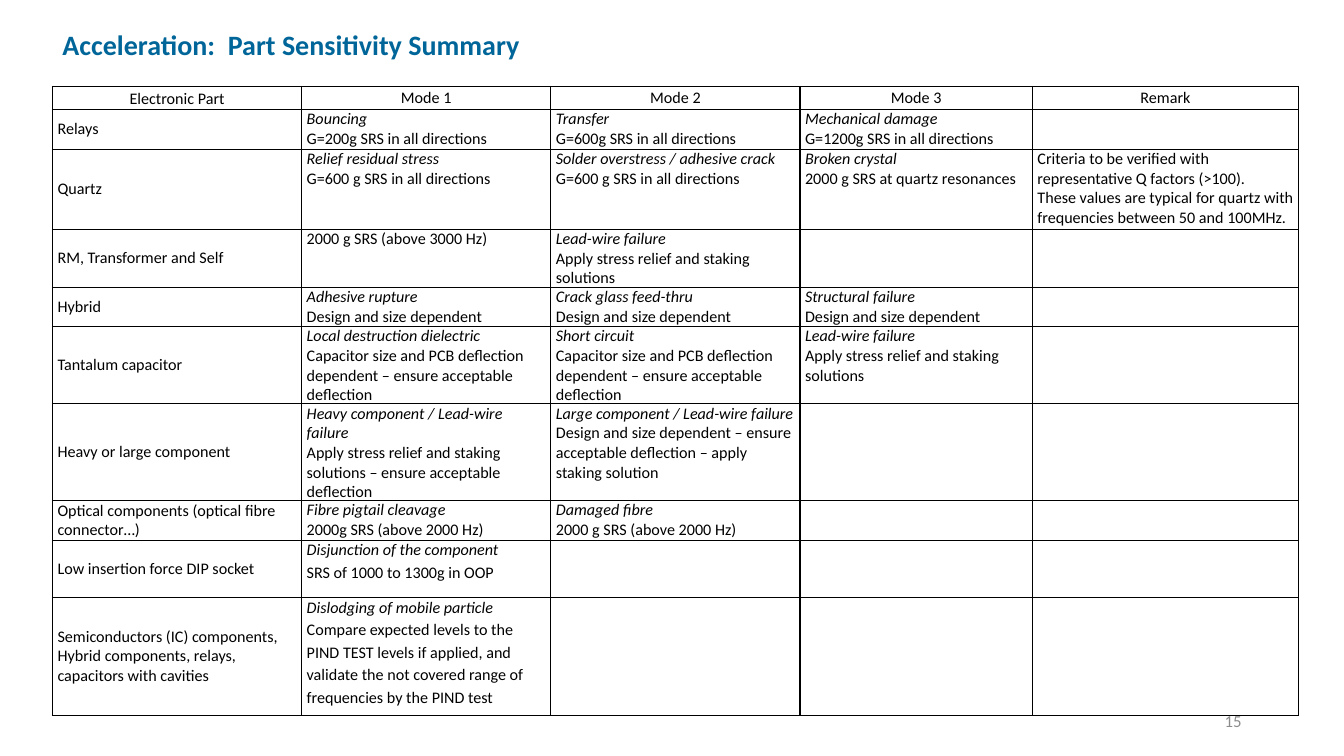
from lxml import etree
from pptx import Presentation
from pptx.dml.color import RGBColor
from pptx.enum.text import MSO_ANCHOR, PP_ALIGN
from pptx.oxml.ns import qn
from pptx.util import Pt

LEFT, CENTER, RIGHT = PP_ALIGN.LEFT, PP_ALIGN.CENTER, PP_ALIGN.RIGHT
TOP, MIDDLE = MSO_ANCHOR.TOP, MSO_ANCHOR.MIDDLE
FONT = "Calibri"
COLORS = {"title": "006699", "text": "000000", "border": "000000", "number": "8C8C8C"}
BLANK_LAYOUT = 6
LOOSE_SPACING = 1.15
REMARK_COLUMN = 4
LOOSE_ROWS = (8, 9)

COLUMN_WIDTHS = [178, 178, 178, 166, 190]
ROW_HEIGHTS = [16.5, 28.5, 57, 41.5, 28, 55, 69, 28.5, 41, 84]
CAPACITOR_ADVICE = "Capacitor size and PCB deflection dependent – ensure acceptable deflection"
LEAD_WIRE = "Lead-wire failure\nApply stress relief and staking solutions"
ROWS = [
    ["Electronic Part", "Mode 1", "Mode 2", "Mode 3", "Remark"],
    ["Relays",
     "Bouncing\nG=200g SRS in all directions",
     "Transfer\nG=600g SRS in all directions",
     "Mechanical damage\nG=1200g SRS in all directions", ""],
    ["Quartz",
     "Relief residual stress\nG=600 g SRS in all directions",
     "Solder overstress / adhesive crack\nG=600 g SRS in all directions",
     "Broken crystal\n2000 g SRS at quartz resonances",
     "Criteria to be verified with representative Q factors (>100).\n"
     "These values are typical for quartz with frequencies between 50 and 100MHz."],
    ["RM, Transformer and Self", "2000 g SRS (above 3000 Hz)", LEAD_WIRE, "", ""],
    ["Hybrid",
     "Adhesive rupture\nDesign and size dependent",
     "Crack glass feed-thru\nDesign and size dependent",
     "Structural failure\nDesign and size dependent", ""],
    ["Tantalum capacitor",
     f"Local destruction dielectric\n{CAPACITOR_ADVICE}",
     f"Short circuit\n{CAPACITOR_ADVICE}", LEAD_WIRE, ""],
    ["Heavy or large component",
     "Heavy component / Lead-wire failure\n"
     "Apply stress relief and staking solutions – ensure acceptable deflection",
     "Large component / Lead-wire failure\n"
     "Design and size dependent – ensure acceptable deflection – apply staking solution",
     "", ""],
    ["Optical components (optical fibre connector…)",
     "Fibre pigtail cleavage\n2000g SRS (above 2000 Hz)",
     "Damaged fibre\n2000 g SRS (above 2000 Hz)", "", ""],
    ["Low insertion force DIP socket",
     "Disjunction of the component\nSRS of 1000 to 1300g in OOP", "", "", ""],
    ["Semiconductors (IC) components, Hybrid components, relays, capacitors with cavities",
     "Dislodging of mobile particle\n"
     "Compare expected levels to the PIND TEST levels if applied, and validate "
     "the not covered range of frequencies by the PIND test", "", "", ""],
]


def format_paragraph(paragraph, size, color, align=LEFT, bold=False, italic=False):
    paragraph.alignment = align
    for run in paragraph.runs:
        run.font.name = FONT
        run.font.size = Pt(size)
        run.font.bold = bold
        run.font.italic = italic
        run.font.color.rgb = RGBColor.from_string(COLORS[color])


def add_label(slide, box, text, size, color, align=LEFT, anchor=TOP, bold=False):
    shape = slide.shapes.add_textbox(*map(Pt, box))
    frame = shape.text_frame
    frame.word_wrap = True
    frame.vertical_anchor = anchor
    frame.text = text
    format_paragraph(frame.paragraphs[0], size, color, align, bold)
    return frame


def add_borders(cell):
    properties = cell._tc.get_or_add_tcPr()
    for side in ("lnL", "lnR", "lnT", "lnB"):
        line = etree.SubElement(properties, qn(f"a:{side}"), w=str(Pt(1)))
        fill = etree.SubElement(line, qn("a:solidFill"))
        etree.SubElement(fill, qn("a:srgbClr"), val=COLORS["border"])


def fill_cell(cell, text, row, column):
    add_borders(cell)
    cell.fill.background()
    cell.margin_left = cell.margin_right = Pt(3.6)
    cell.margin_top = cell.margin_bottom = Pt(0)
    cell.vertical_anchor = MIDDLE if row == 0 or column == 0 else TOP
    cell.text_frame.text = text
    paragraphs = cell.text_frame.paragraphs
    has_mode = len(paragraphs) > 1 and column != REMARK_COLUMN
    for index, paragraph in enumerate(paragraphs):
        format_paragraph(paragraph, 11.5, "text", CENTER if row == 0 else LEFT,
                         italic=has_mode and index == 0)
        if (row == 0 and column == 0) or (row in LOOSE_ROWS and index > 0):
            paragraph.line_spacing = LOOSE_SPACING


def add_sensitivity_table(slide, box):
    left, top, width, height = box
    shape = slide.shapes.add_table(len(ROWS), len(COLUMN_WIDTHS),
                                   Pt(left), Pt(top), Pt(width), Pt(height))
    table = shape.table
    table.first_row = table.horz_banding = False
    for column, share in zip(table.columns, COLUMN_WIDTHS):
        column.width = Pt(width * share / sum(COLUMN_WIDTHS))
    for row, share in zip(table.rows, ROW_HEIGHTS):
        row.height = Pt(height * share / sum(ROW_HEIGHTS))
    for row, texts in enumerate(ROWS):
        for column, text in enumerate(texts):
            fill_cell(table.cell(row, column), text, row, column)


def main():
    presentation = Presentation()
    presentation.slide_width, presentation.slide_height = Pt(960), Pt(540)
    slide = presentation.slides.add_slide(presentation.slide_layouts[BLANK_LAYOUT])
    add_label(slide, (678, 500.5, 216, 28.75), "15", 12, "number", RIGHT, MIDDLE)
    title = add_label(slide, (37.5, 16, 468, 31.5),
                      "Acceleration:  Part Sensitivity Summary", 20, "title", bold=True)
    title.paragraphs[0].space_after = Pt(10)
    add_sensitivity_table(slide, (37.5, 61.75, 890, 449))
    presentation.save("out.pptx")


if __name__ == "__main__":
    main()
